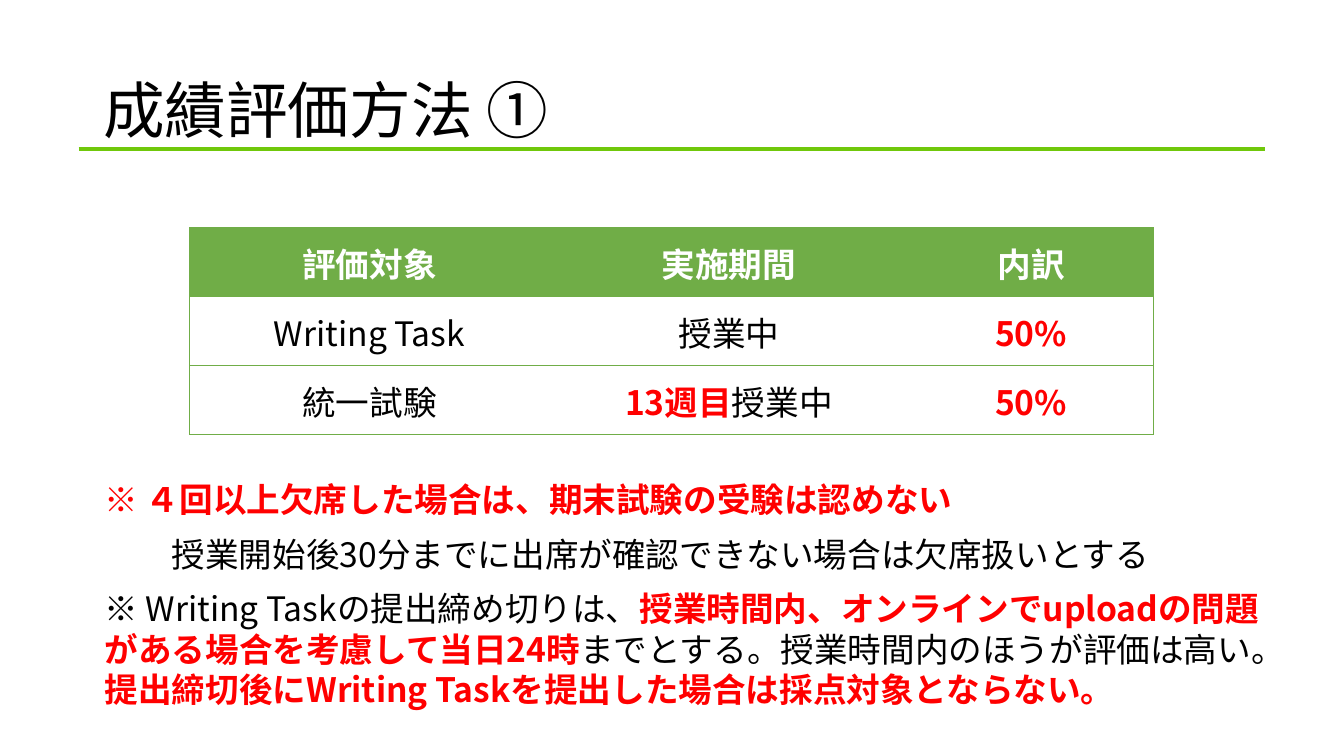
from pptx import Presentation
from pptx.util import Cm, Pt
from pptx.dml.color import RGBColor
from pptx.enum.shapes import MSO_CONNECTOR
from pptx.enum.text import MSO_ANCHOR, PP_ALIGN
from pptx.oxml.ns import qn
from lxml.etree import SubElement, Element

# Content: each text is a list of (words, style) runs
TITLE = [("成績評価方法 ①", "title")]
ROWS = [
    [[("評価対象", "head")], [("実施期間", "head")], [("内訳", "head")]],
    [[("Writing Task", "plain")], [("授業中", "plain")], [("50%", "key")]],
    [[("統一試験", "plain")], [("13週目", "key"), ("授業中", "plain")], [("50%", "key")]],
]
# Notes: (left indent in cm, runs)
NOTES = [
    (0, [("※ ４回以上欠席した場合は、期末試験の受験は認めない", "key")]),
    (1.69, [("授業開始後30分までに出席が確認できない場合は欠席扱いとする", "plain")]),
    (0, [
        ("※ Writing Taskの提出締め切りは、", "plain"),
        ("授業時間内、オンラインでuploadの問題がある場合を考慮して当日24時", "key"),
        ("までとする。授業時間内のほうが評価は高い。", "plain"),
        ("提出締切後にWriting Taskを提出した場合は採点対象とならない。", "key"),
    ]),
]

COLORS = {"black": "000000", "white": "FFFFFF", "red": "FF0000",
          "green": "70AD47", "rule": "70C80B"}
FONT = "Noto Sans CJK JP"
STYLES = {
    "title": ({"size": Pt(44), "bold": False, "name": "Arial"}, "black"),
    "head": ({"size": Pt(24), "bold": True, "name": FONT}, "white"),
    "plain": ({"size": Pt(24), "bold": False, "name": FONT}, "black"),
    "key": ({"size": Pt(24), "bold": True, "name": FONT}, "red"),
}
COLS = [9.06, 9.06, 6.17]
ROW = 1.74


def color(name):
    return RGBColor.from_string(COLORS[name])


def setall(item, values):
    for key, value in values.items():
        setattr(item, key, value)


def write(para, runs):
    for words, style in runs:
        run = para.add_run()
        run.text = words
        values, tint = STYLES[style]
        setall(run.font, values)
        run.font.color.rgb = color(tint)
        SubElement(run.font._element, qn("a:ea"), typeface=FONT)


def textbox(left, top, width, height, values):
    frame = slide.shapes.add_textbox(Cm(left), Cm(top), Cm(width), Cm(height)).text_frame
    setall(frame, {"word_wrap": True, "margin_left": 0, "margin_right": 0,
                   "margin_top": 0, "margin_bottom": 0, **values})
    return frame


def border(cell, sides):
    props = cell._tc.get_or_add_tcPr()
    for place, side in enumerate("LRTB"):
        line = Element(qn("a:ln" + side), w=str(Pt(0.5)))
        if side in sides:
            fill = SubElement(line, qn("a:solidFill"))
            SubElement(fill, qn("a:srgbClr"), val=COLORS["green"])
        else:
            SubElement(line, qn("a:noFill"))
        props.insert(place, line)


deck = Presentation()
setall(deck, {"slide_width": Cm(33.87), "slide_height": Cm(19.05)})
slide = deck.slides.add_slide(deck.slide_layouts[6])

# Title
frame = textbox(2.6, 1.02, 28.5, 3.68, {"vertical_anchor": MSO_ANCHOR.MIDDLE})
frame.paragraphs[0].line_spacing = 0.9
write(frame.paragraphs[0], TITLE)

# Grading table
table = slide.shapes.add_table(len(ROWS), len(COLS), Cm(4.78), Cm(5.73),
                               Cm(sum(COLS)), Cm(ROW * len(ROWS))).table
setall(table, {"first_row": False, "horz_banding": False})
for col, width in zip(table.columns, COLS):
    col.width = Cm(width)
for r, row in enumerate(ROWS):
    table.rows[r].height = Cm(ROW)
    for c, runs in enumerate(row):
        cell = table.cell(r, c)
        setall(cell, {"vertical_anchor": MSO_ANCHOR.MIDDLE, "margin_left": Cm(0.03),
                      "margin_right": Cm(0.03), "margin_top": Cm(0.03), "margin_bottom": 0})
        if r == 0:
            cell.fill.solid()
            cell.fill.fore_color.rgb = color("green")
        else:
            cell.fill.background()
        border(cell, "TB" + "L" * (c == 0) + "R" * (c == len(COLS) - 1))
        para = cell.text_frame.paragraphs[0]
        para.alignment = PP_ALIGN.CENTER
        write(para, runs)

# Notes below the table
frame = textbox(2.64, 12.07, 29.1, 5.9, {"vertical_anchor": MSO_ANCHOR.TOP})
for n, (indent, runs) in enumerate(NOTES):
    para = frame.add_paragraph() if n else frame.paragraphs[0]
    setall(para, {"line_spacing": Pt(28.9), "space_before": Pt(10 if n else 0)})
    para._p.get_or_add_pPr().set("marL", str(Cm(indent)))
    write(para, runs)

# Rule under the title
rule = slide.shapes.add_connector(MSO_CONNECTOR.STRAIGHT, Cm(1.98), Cm(3.76), Cm(31.88), Cm(3.76))
rule.line.width = Pt(2.5)
rule.line.color.rgb = color("rule")
SubElement(rule._element.spPr, qn("a:effectLst"))

deck.save("out.pptx")
